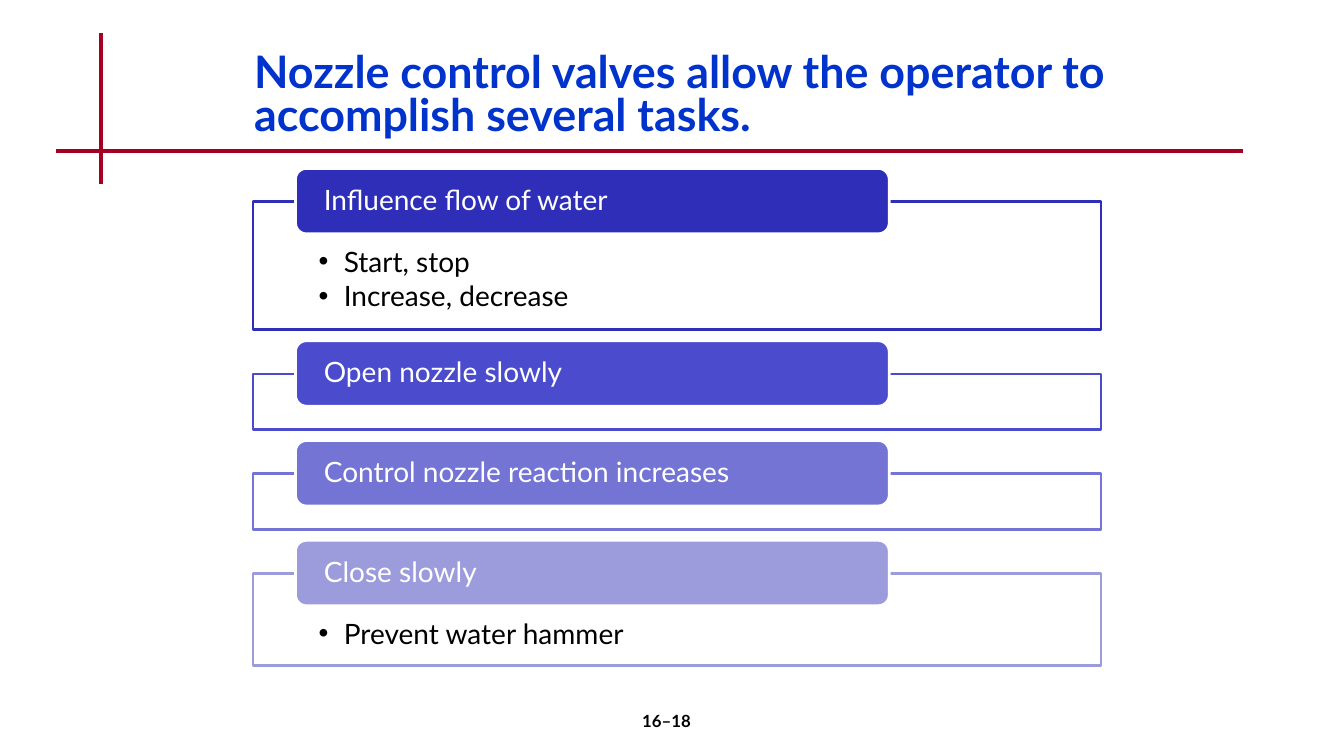
from lxml import etree
from pptx import Presentation
from pptx import util as u
from pptx.dml.color import RGBColor
from pptx.enum import shapes, text
from pptx.oxml.ns import qn

PX = 9144
INK = {"title": "0033CC", "rule": "A50021", "body": "000000", "white": "FFFFFF"}
RULES = [(100, 33, 100, 183), (56, 150, 1233, 150)]
TASKS = [
    ("Influence flow of water", ["Start, stop", "Increase, decrease"], 127, "2E2EB9"),
    ("Open nozzle slowly", [], 55, "4B4BCD"),
    ("Control nozzle reaction increases", [], 55, "7474D4"),
    ("Close slowly", ["Prevent water hammer"], 91, "9C9CDD"),
]
TOP, GAP, RISE = 200, 44, 33


def px(*nums):
    return [u.Emu(n * PX) for n in nums]


def rgb(code):
    return RGBColor.from_string(code)


def put(item, **vals):
    for key, val in vals.items():
        setattr(item, key, val)


def style(para, size, code, bold=False, **vals):
    put(para, **vals)
    put(para.font, name="Lato", size=u.Pt(size), bold=bold)
    para.font.color.rgb = rgb(code)


def frame(shape, anchor, pads=(10, 5, 10, 5)):
    left, top, right, low = px(*pads)
    put(shape.text_frame, word_wrap=True, vertical_anchor=anchor,
        margin_left=left, margin_top=top, margin_right=right, margin_bottom=low)
    return shape.text_frame


def bullet(para):
    props = para._p.get_or_add_pPr()
    put_in = {"marL": 25 * PX, "indent": -25 * PX}
    for key, val in put_in.items():
        props.set(key, str(val))
    etree.SubElement(props, qn("a:buFont")).set("typeface", "Arial")
    etree.SubElement(props, qn("a:buChar")).set("char", "•")


def rule(slide, ends):
    line = slide.shapes.add_connector(shapes.MSO_CONNECTOR.STRAIGHT, *px(*ends))
    line.line.color.rgb = rgb(INK["rule"])
    line.line.width = u.Pt(3)
    etree.SubElement(line._element.spPr, qn("a:effectLst"))


def block(slide, kind, spot, fill, edge):
    shape = slide.shapes.add_shape(kind, *px(*spot))
    shape.shadow.inherit = False
    shape.fill.solid()
    shape.fill.fore_color.rgb = rgb(fill)
    shape.line.color.rgb = rgb(edge)
    shape.line.width = u.Pt(2)
    return shape


def task(slide, top, head, points, high, code):
    kinds = shapes.MSO_SHAPE
    panel = block(slide, kinds.RECTANGLE, (251, top, 841, high), INK["white"], code)
    if points:
        body = frame(panel, text.MSO_ANCHOR.TOP, (65, 46, 65, 16))
        body.text = "\n".join(points)
        for para in body.paragraphs:
            bullet(para)
            style(para, 20, INK["body"], alignment=text.PP_ALIGN.LEFT,
                  line_spacing=0.9, space_after=u.Pt(3))
    tab = block(slide, kinds.ROUNDED_RECTANGLE, (293, top - RISE, 589, 65), code, INK["white"])
    label = frame(tab, text.MSO_ANCHOR.MIDDLE, (25, 3, 25, 3))
    label.text = head
    style(label.paragraphs[0], 20, INK["white"],
          alignment=text.PP_ALIGN.LEFT, line_spacing=0.9)


def title(slide, words):
    shape = slide.shapes.title
    left, top, width, height = px(242, 49, 868, 100)
    put(shape, left=left, top=top, width=width, height=height)
    body = frame(shape, text.MSO_ANCHOR.TOP)
    body.auto_size = text.MSO_AUTO_SIZE.NONE
    body.text = words
    style(body.paragraphs[0], 32, INK["title"], True,
          alignment=text.PP_ALIGN.LEFT, line_spacing=0.8)


def folio(slide, words):
    body = frame(slide.shapes.add_textbox(*px(522, 700, 278, 50)), text.MSO_ANCHOR.TOP)
    body.text = words
    style(body.paragraphs[0], 12, INK["body"], True, alignment=text.PP_ALIGN.CENTER)


def main():
    deck = Presentation()
    deck.slide_width, deck.slide_height = px(1333, 750)
    slide = deck.slides.add_slide(deck.slide_layouts.get_by_name("Title Only"))
    for ends in RULES:
        rule(slide, ends)
    title(slide, "Nozzle control valves allow the operator to accomplish several tasks.")
    folio(slide, "16–18")
    top = TOP
    for head, points, high, code in TASKS:
        task(slide, top, head, points, high, code)
        top += high + GAP
    deck.save("out.pptx")


if __name__ == "__main__":
    main()
